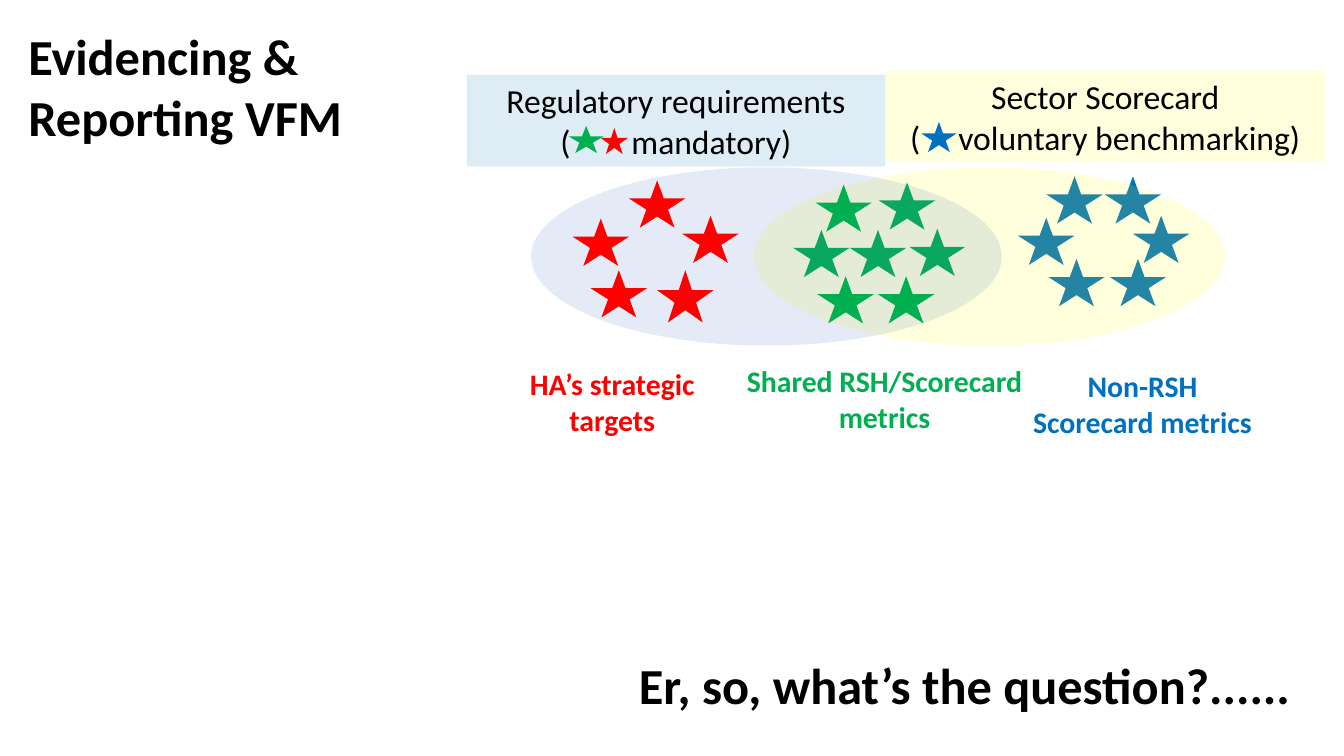
"""Build the slide on evidencing and reporting value for money."""
from dataclasses import dataclass

from lxml.etree import SubElement
from pptx import Presentation
from pptx.dml.color import RGBColor
from pptx.enum.shapes import MSO_SHAPE as Preset
from pptx.enum.text import MSO_ANCHOR as Anchor, MSO_AUTO_SIZE as AutoSize, PP_ALIGN as Align
from pptx.oxml.ns import qn
from pptx.util import Pt


@dataclass(frozen=True)
class Theme:
    font: str = "Calibri"
    black: str = "000000"
    blue: str = "0070C0"
    green: str = "00B050"
    red: str = "FF0000"
    yellow: str = "FFFF00"
    indigo: str = "4472C4"
    heading: float = 36
    panel: float = 24
    label: float = 21.3


theme = Theme()
STAR_SIZE = (40.3, 33.8)


def add_filled(preset, box, color, opacity=100):
    """Add a borderless shape, with its opacity in percent."""
    shape = slide.shapes.add_shape(preset, *map(Pt, box))
    shape.shadow.inherit = False
    shape.line.fill.background()
    shape.fill.solid()
    shape.fill.fore_color.rgb = RGBColor.from_string(color)
    if opacity < 100:
        color_element = shape.fill._xPr.find(qn("a:solidFill"))[0]
        SubElement(color_element, qn("a:alpha")).set("val", str(opacity * 1000))
    return shape


def format_text(shape, size, color=theme.black, bold=True, align=Align.LEFT):
    """Apply wrapping and one type style to all of a shape's paragraphs."""
    frame = shape.text_frame
    frame.word_wrap = True
    frame.auto_size = AutoSize.NONE
    for paragraph in frame.paragraphs:
        paragraph.alignment = align
        paragraph.font.name = theme.font
        paragraph.font.size = Pt(size)
        paragraph.font.bold = bold
        paragraph.font.color.rgb = RGBColor.from_string(color)


presentation = Presentation()
presentation.slide_width, presentation.slide_height = Pt(960), Pt(540)
slide = presentation.slides.add_slide(presentation.slide_layouts[5])

title = slide.shapes.title
title.left, title.top, title.width, title.height = map(Pt, (13, 14.4, 243.4, 94.3))
title.text_frame.text = "Evidencing & Reporting VFM"
title.text_frame.vertical_anchor = Anchor.TOP
format_text(title, theme.heading)

scorecard_stars = [(792.7, 185), (747.4, 126), (727.2, 155.5),
                   (809.3, 154.1), (748.8, 185), (789.1, 126)]
shared_stars_behind = [(566.6, 164.2), (649.4, 163.4), (607, 164.2), (627.8, 130.3)]
shared_stars_front = [(582.5, 131.8), (627.1, 197.3), (583.9, 197.3)]
strategic_stars = [(449.3, 128.9), (409, 156.2), (487.4, 154.1), (421.9, 193)]

layers = [
    (scorecard_stars, theme.blue, (538.6, theme.yellow)),
    (shared_stars_behind, theme.green, (379.4, theme.indigo)),
    (shared_stars_front, theme.green, None),
    (strategic_stars, theme.red, None),
]
for stars, star_color, ellipse in layers:
    for position in stars:
        add_filled(Preset.STAR_5_POINT, position + STAR_SIZE, star_color)
    if ellipse:
        left, ellipse_color = ellipse
        add_filled(Preset.OVAL, (left, 119.5, 336.2, 127.4), ellipse_color, 14)
add_filled(Preset.STAR_5_POINT, (469.4, 193, 40.3, 37.4), theme.red)

panels = [
    ((632.2, 50.4, 314.6, 65.5), theme.yellow, "Sector Scorecard",
     "voluntary benchmarking)", 21.7),
    ((333.4, 53.3, 298.8, 65.5), theme.blue, "Regulatory requirements",
     "mandatory)", 38),
]
for box, color, heading, note, star_gap in panels:
    panel = add_filled(Preset.RECTANGLE, box, color, 13)
    panel.text_frame.text = heading
    panel.text_frame.vertical_anchor = Anchor.MIDDLE
    paragraph = panel.text_frame.add_paragraph()
    for text in ("(", " ", note):
        run = paragraph.add_run()
        run.text = text
        if text == " ":
            run._r.get_or_add_rPr().set("spc", str(round(star_gap * 100)))
    format_text(panel, theme.panel, bold=False, align=Align.CENTER)

key_stars = [
    ((658.1, 87.1, 25.2, 21.6), theme.blue),
    ((406.1, 90, 25.2, 19.4), theme.green),
    ((429.1, 91.4, 19.4, 18.7), theme.red),
]
for box, color in key_stars:
    add_filled(Preset.STAR_5_POINT, box, color)

captions = [
    ((518.4, 255.6, 226.8, 59), "Shared RSH/Scorecard metrics",
     theme.label, theme.green, Align.CENTER),
    ((727.2, 259.2, 177.8, 59), "Non-RSH Scorecard metrics",
     theme.label, theme.blue, Align.CENTER),
    ((344.9, 257.8, 185, 59), "HA’s strategic targets",
     theme.label, theme.red, Align.CENTER),
    ((449.3, 463.7, 504.7, 51.1), "Er, so, what’s the question?......",
     theme.heading, theme.black, Align.LEFT),
]
for box, text, size, color, align in captions:
    caption = slide.shapes.add_textbox(*map(Pt, box))
    caption.text_frame.text = text
    format_text(caption, size, color, align=align)

presentation.save("out.pptx")
